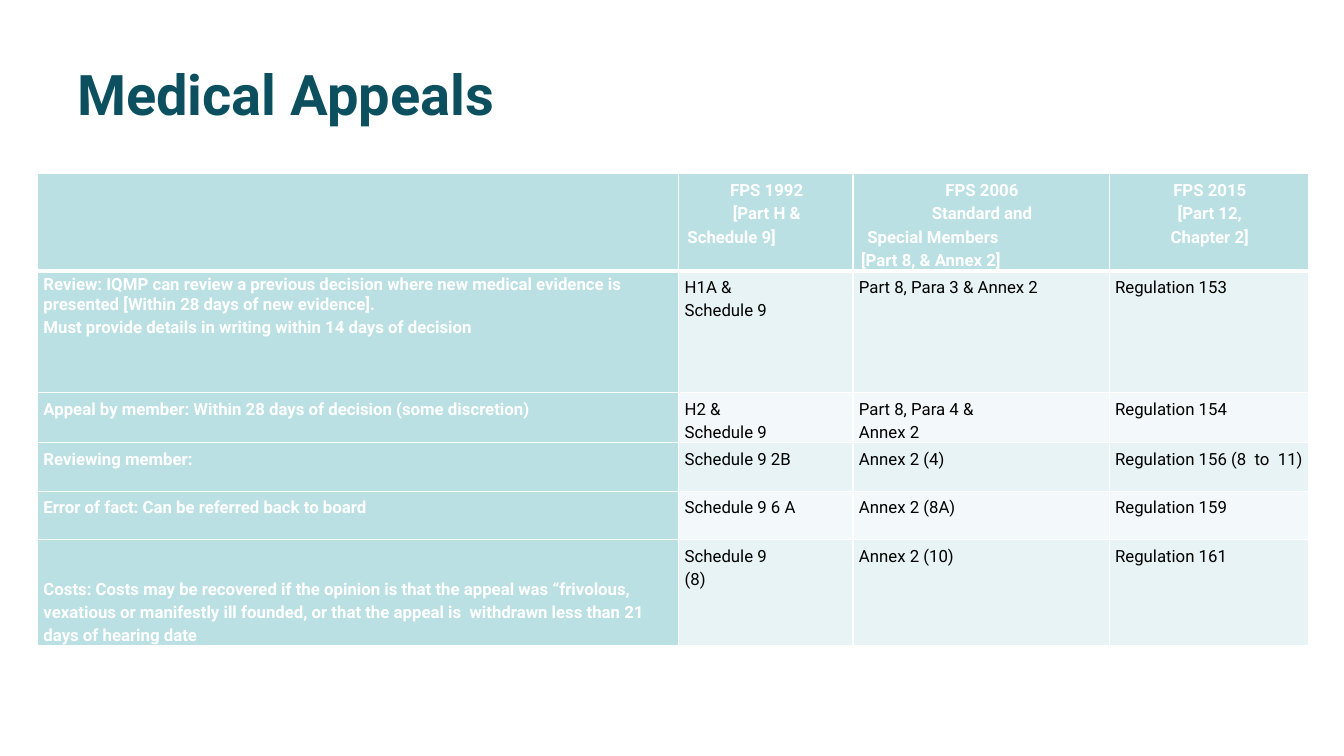
"""Build the Medical Appeals slide with its table of scheme rules."""
from lxml import etree
from pptx import Presentation
from pptx.dml.color import RGBColor
from pptx.enum import text
from pptx.oxml import ns
from pptx.util import Pt

TITLE = "Medical Appeals"
ROWS = [
    ("",
     ["FPS 1992", "[Part H &", "Schedule 9]"],
     ["FPS 2006", "Standard and", "Special Members", "[Part 8, & Annex 2]"],
     ["FPS 2015", "[Part 12,", "Chapter 2]"]),
    (["Review: IQMP can review a previous decision where new medical evidence "
      "is presented [Within 28 days of new evidence].",
      "Must provide details in writing within 14 days of decision"],
     ["H1A &", "Schedule 9"], ["Part 8, Para 3 & Annex 2"], ["Regulation 153"]),
    (["Appeal by member: Within 28 days of decision (some discretion)"],
     ["H2 &", "Schedule 9"], ["Part 8, Para 4 &", "Annex 2"],
     ["Regulation 154"]),
    (["Reviewing member:"],
     ["Schedule 9 2B"], ["Annex 2 (4)"], ["Regulation 156 (8  to  11)"]),
    (["Error of fact: Can be referred back to board"],
     ["Schedule 9 6 A"], ["Annex 2 (8A)"], ["Regulation 159"]),
    (["Costs: Costs may be recovered if the opinion is that the appeal was "
      "“frivolous, vexatious or manifestly ill founded, or that the appeal is"
      "  withdrawn less than 21 days of hearing date"],
     ["Schedule 9", "(8)"], ["Annex 2 (10)"], ["Regulation 161"]),
]
INDENT = {"Schedule 9]": 2, "Special Members": 6, "[Part 8, & Annex 2]": 1.5}
WIDTHS = [458, 124.5, 183, 142.5]
HEIGHTS = [69, 87, 36, 34.5, 34.5, 75.5]
LEFT, TOP = 26.75, 124

WHITE = RGBColor(0xFF, 0xFF, 0xFF)
BLACK = RGBColor(0, 0, 0)
NAVY = RGBColor(0x0C, 0x50, 0x60)
TEAL = RGBColor(0xBB, 0xE0, 0xE3)
BANDS = [RGBColor(0xF3, 0xF9, 0xFA), RGBColor(0xE7, 0xF3, 0xF4)]

HEAD = dict(name="Roboto", size=Pt(40), bold=True)
LABEL = dict(name="Roboto", size=Pt(12), bold=True)
BODY = dict(name="Roboto", size=Pt(12), bold=False)
INSET = dict(margin_left=Pt(4.3), margin_top=Pt(2.9),
             margin_right=Pt(2.9), margin_bottom=0)


def assign(item, values):
    """Set each named attribute on the item."""
    for key, value in values.items():
        setattr(item, key, value)


def write(par, words, style, color):
    """Put one styled run in the paragraph."""
    run = par.add_run()
    run.text = words
    assign(run.font, style)
    run.font.color.rgb = color


def edge(cell, side, width):
    """Draw a white border on one side of the cell."""
    props = cell._tc.get_or_add_tcPr()
    line = etree.SubElement(props, ns.qn("a:ln" + side), w=str(Pt(width)))
    fill = etree.SubElement(line, ns.qn("a:solidFill"))
    etree.SubElement(fill, ns.qn("a:srgbClr"), val=str(WHITE))


def fill_cell(cell, lines, row, col):
    """Format one cell and write its paragraphs."""
    assign(cell, INSET)
    label = row == 0 or col == 0
    for side in "LRTB":
        thick = (row, side) in [(0, "B"), (1, "T")]
        edge(cell, side, 3 if thick else 1)
    cell.fill.solid()
    cell.fill.fore_color.rgb = TEAL if label else BANDS[row % 2]
    frame = cell.text_frame
    for num, words in enumerate(lines):
        par = frame.add_paragraph() if num else frame.paragraphs[0]
        par.line_spacing = 1.01 if words.startswith("Review:") else 1.15
        if num < len(lines) - 1:
            par.space_after = Pt(0.6)
        if words in INDENT:
            par._p.get_or_add_pPr().set("marL", str(Pt(INDENT[words])))
        elif row == 0:
            par.alignment = text.PP_ALIGN.CENTER
        write(par, words, LABEL if label else BODY, WHITE if label else BLACK)


def main():
    """Create the slide and save it."""
    deck = Presentation()
    assign(deck, dict(slide_width=Pt(960), slide_height=Pt(540)))
    slide = deck.slides.add_slide(deck.slide_layouts[5])
    title = slide.shapes.title
    assign(title, dict(left=Pt(48), top=Pt(21.6), width=Pt(864), height=Pt(90)))
    title.text_frame.vertical_anchor = text.MSO_ANCHOR.MIDDLE
    par = title.text_frame.paragraphs[0]
    par.alignment = text.PP_ALIGN.LEFT
    write(par, TITLE, HEAD, NAVY)

    grid = slide.shapes.add_table(
        len(ROWS), len(WIDTHS), Pt(LEFT), Pt(TOP),
        Pt(sum(WIDTHS)), Pt(sum(HEIGHTS))).table
    grid.first_col = True
    for col, width in zip(grid.columns, WIDTHS):
        col.width = Pt(width)
    for row, height in zip(grid.rows, HEIGHTS):
        row.height = Pt(height)
    for row, cells in enumerate(ROWS):
        for col, lines in enumerate(cells):
            fill_cell(grid.cell(row, col), lines, row, col)
    grid.cell(len(ROWS) - 1, 0).vertical_anchor = text.MSO_ANCHOR.BOTTOM
    deck.save("out.pptx")


if __name__ == "__main__":
    main()
